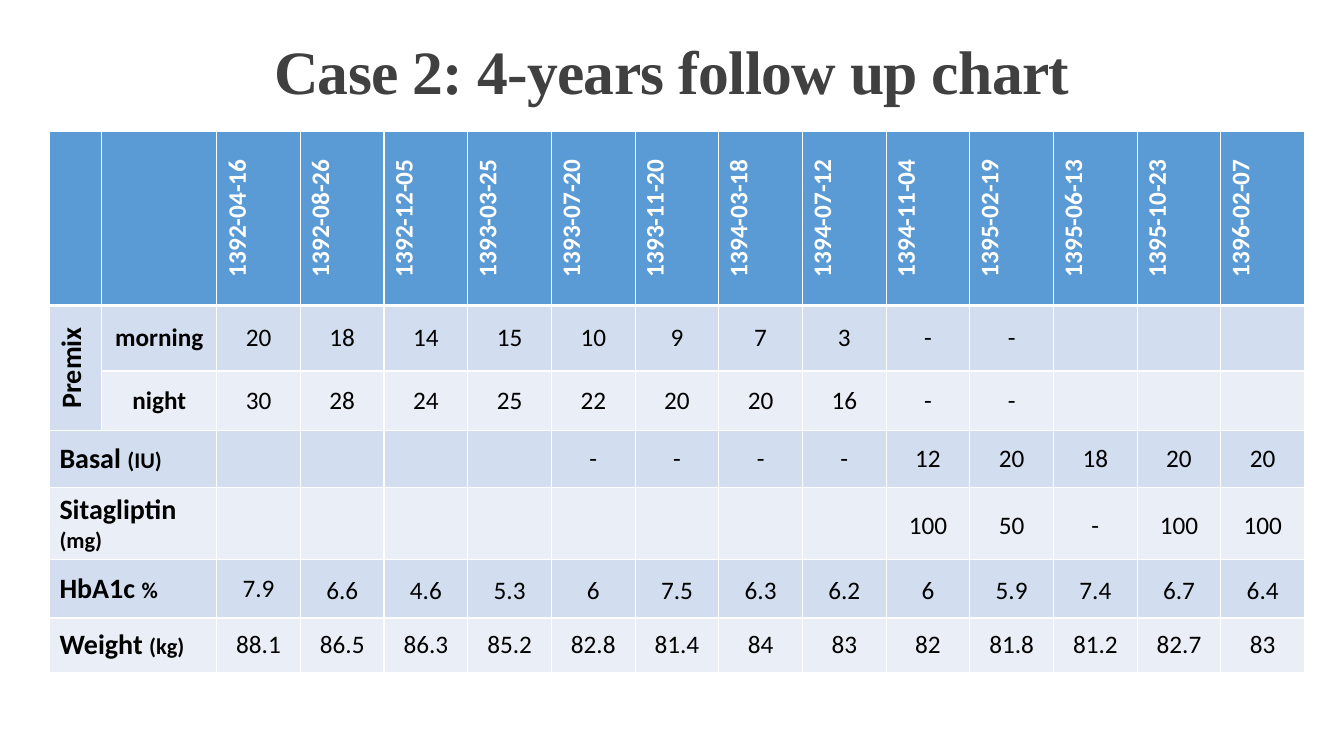
import pptx
import pptx.util
import pptx.dml.color
import pptx.enum.text
import pptx.oxml
import pptx.oxml.ns

Inch = pptx.util.Inches
Pt = pptx.util.Pt
Align = pptx.enum.text.PP_ALIGN
Middle = pptx.enum.text.MSO_ANCHOR.MIDDLE


def tint(code):
    return pptx.dml.color.RGBColor.from_string(code)


def write(text, frame, size=18, color="000000", bold=False, font="Calibri",
          align=Align.CENTER, line=None):
    para = frame.paragraphs[0]
    para.alignment = align
    if line:
        para.line_spacing = line
    run = para.add_run()
    run.text = text
    run.font.size = Pt(size)
    run.font.bold = bold
    run.font.name = font
    run.font.color.rgb = tint(color)
    return run


deck = pptx.Presentation()
deck.slide_width, deck.slide_height = Inch(13.33), Inch(7.5)
slide = deck.slides.add_slide(deck.slide_layouts[6])

dates = ["1392-04-16", "1392-08-26", "1392-12-05", "1393-03-25", "1393-07-20",
         "1393-11-20", "1394-03-18", "1394-07-12", "1394-11-04", "1395-02-19",
         "1395-06-13", "1395-10-23", "1396-02-07"]
rows = [
    ("", "", 1.73, dates),
    ("morning", "", 0.65, "20 18 14 15 10 9 7 3 - -".split() + [""] * 3),
    ("night", "", 0.59, "30 28 24 25 22 20 20 16 - -".split() + [""] * 3),
    ("Basal ", "(IU)", 0.57, [""] * 4 + "- - - - 12 20 18 20 20".split()),
    ("Sitagliptin ", "(mg)", 0.61, [""] * 8 + "100 50 - 100 100".split()),
    ("HbA1c ", "%", 0.58,
     "7.9 6.6 4.6 5.3 6 7.5 6.3 6.2 6 5.9 7.4 6.7 6.4".split()),
    ("Weight ", "(kg)", 0.54,
     "88.1 86.5 86.3 85.2 82.8 81.4 84 83 82 81.8 81.2 82.7 83".split()),
]
wides = [0.52, 1.14] + [0.83] * len(dates)
highs = [row[2] for row in rows]
grid = slide.shapes.add_table(len(rows), len(wides), Inch(0.49), Inch(1.3),
                              Inch(sum(wides)), Inch(sum(highs))).table
for col, wide in zip(grid.columns, wides):
    col.width = Inch(wide)

for r, (label, unit, high, data) in enumerate(rows):
    grid.rows[r].height = Inch(high)
    head = r == 0
    shade = "5B9BD5" if head else "D2DEEF" if r % 2 else "EAEFF7"
    for c in range(len(wides)):
        cell = grid.cell(r, c)
        cell.vertical_anchor = Middle
        props = cell._tc.get_or_add_tcPr()
        for side in "LRTB":
            thick = 3 if (head and side == "B") or (r == 1 and side == "T") else 1
            props.append(pptx.oxml.parse_xml(
                f'<a:ln{side} {pptx.oxml.ns.nsdecls("a")} w="{Pt(thick)}">'
                f'<a:solidFill><a:srgbClr val="FFFFFF"/></a:solidFill></a:ln{side}>'))
        cell.fill.solid()
        cell.fill.fore_color.rgb = tint(shade)
        if c < 2 or not data[c - 2]:
            continue
        loose = r == 4 or (r in (0, 5) and c > 2)
        if loose:
            cell.margin_left = cell.margin_right = Inch(0.07)
            cell.margin_top = cell.margin_bottom = 0
        if head:
            props.set("vert", "vert270")
        write(data[c - 2], cell.text_frame, bold=head,
              color="FFFFFF" if head else "000000", line=1.15 if loose else None)
    if unit:
        name = grid.cell(r, 0)
        name.merge(grid.cell(r, 1))
        write(label, name.text_frame, size=20, bold=True, align=Align.LEFT)
        write(unit, name.text_frame, size=16, bold=True, align=Align.LEFT)
    elif label:
        write(label, grid.cell(r, 1).text_frame, bold=True)

dose = grid.cell(1, 0)
dose.merge(grid.cell(2, 0))
dose._tc.get_or_add_tcPr().set("vert", "vert270")
write("Premix", dose.text_frame, size=20, bold=True)

title = slide.shapes.add_textbox(0, Inch(0.26), deck.slide_width, Inch(0.98)).text_frame
title.word_wrap = True
title.vertical_anchor = Middle
run = write("Case 2: 4-years follow up chart", title, size=44, color="404040",
            bold=True, font="Times New Roman", line=0.85)
run.font._element.set("spc", "-50")

deck.save("out.pptx")
